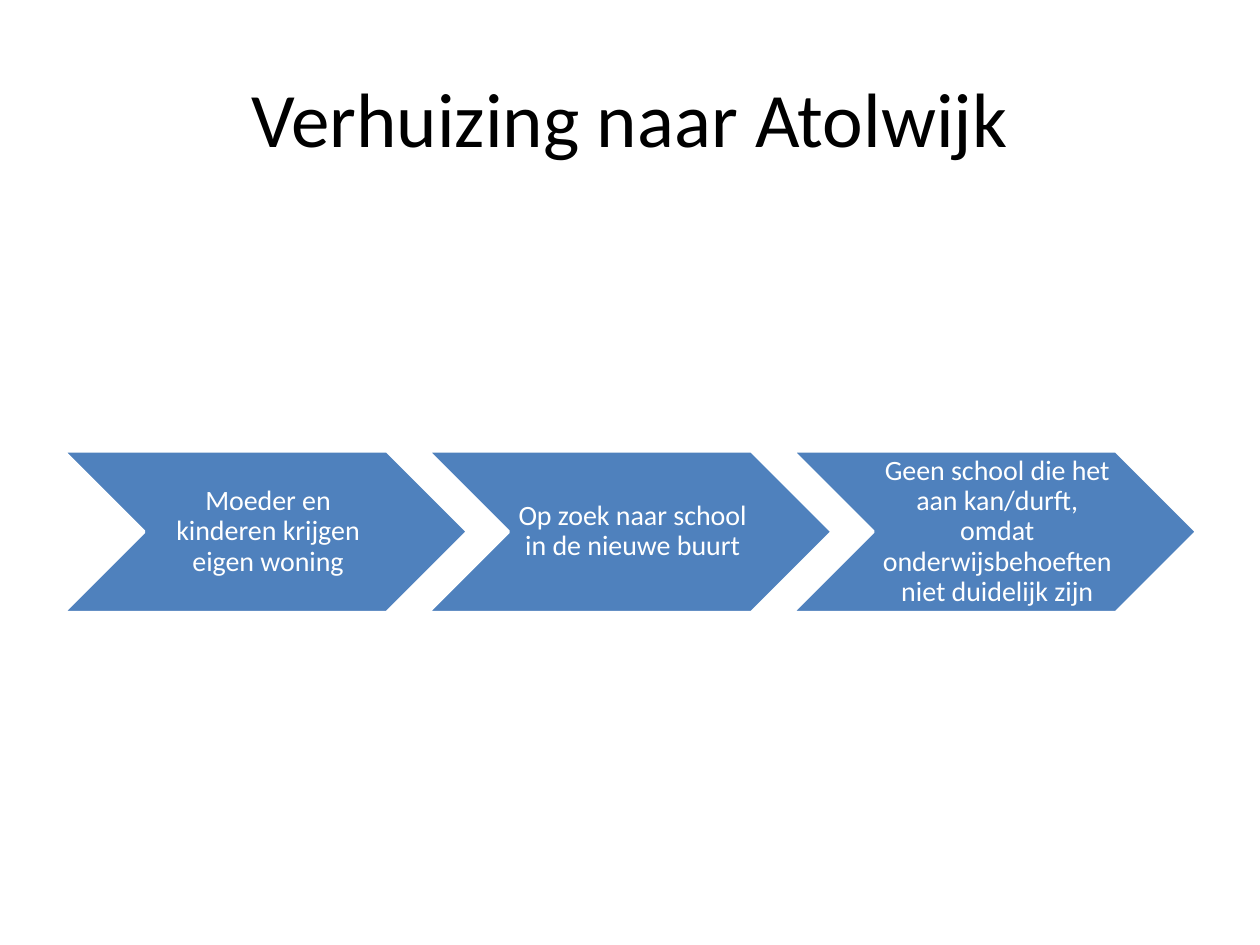
from pptx import Presentation
from pptx import util as u
from pptx.dml import color
from pptx.enum import shapes, text

STEPS = [
    "Moeder en kinderen krijgen eigen woning",
    "Op zoek naar school in de nieuwe buurt",
    "Geen school die het aan kan/durft, omdat onderwijsbehoeften niet duidelijk zijn",
]
MARGIN = 1.27
STEP_TOP, STEP_WIDTH, STEP_HEIGHT = 9.09, 8.16, 3.26
STEP_PITCH = 7.35


def rgb(value):
    return color.RGBColor.from_string(value)


def write(frame, words, size, ink, font="Calibri", spacing=1.0):
    """Fill a text frame with one centred paragraph."""
    frame.word_wrap = True
    frame.auto_size = text.MSO_AUTO_SIZE.NONE
    frame.vertical_anchor = text.MSO_ANCHOR.MIDDLE
    para = frame.paragraphs[0]
    para.alignment = text.PP_ALIGN.CENTER
    para.line_spacing = spacing
    span = para.add_run()
    span.text = words
    span.font.name = font
    span.font.size = u.Pt(size)
    span.font.color.rgb = rgb(ink)


class ProcessSlide:
    fill = "4F81BD"
    light = "FFFFFF"
    dark = "000000"

    def __init__(self, deck):
        self.slide = deck.slides.add_slide(deck.slide_layouts.get_by_name("Title Only"))
        background = self.slide.background.fill
        background.solid()
        background.fore_color.rgb = rgb(self.light)

    def title(self, words):
        box = self.slide.shapes.title
        box.left, box.top = u.Cm(MARGIN), u.Cm(0.76)
        box.width, box.height = u.Cm(22.86), u.Cm(3.18)
        write(box.text_frame, words, size=44, ink=self.dark)

    def step(self, words, left):
        box = self.slide.shapes.add_shape(
            shapes.MSO_SHAPE.CHEVRON,
            u.Cm(left), u.Cm(STEP_TOP), u.Cm(STEP_WIDTH), u.Cm(STEP_HEIGHT))
        box.adjustments[0] = 0.5
        box.shadow.inherit = False
        box.fill.solid()
        box.fill.fore_color.rgb = rgb(self.fill)
        box.line.color.rgb = rgb(self.light)
        box.line.width = u.Pt(2)
        frame = box.text_frame
        frame.margin_left = u.Cm(0.17)
        frame.margin_right = frame.margin_top = frame.margin_bottom = u.Cm(0.06)
        write(frame, words, size=16, ink=self.light, spacing=0.9)


def main():
    deck = Presentation()
    deck.slide_width, deck.slide_height = u.Cm(25.4), u.Cm(19.05)
    page = ProcessSlide(deck)
    page.title("Verhuizing naar Atolwijk")
    for index, words in enumerate(STEPS):
        page.step(words, MARGIN + index * STEP_PITCH)
    deck.save("out.pptx")


if __name__ == "__main__":
    main()
